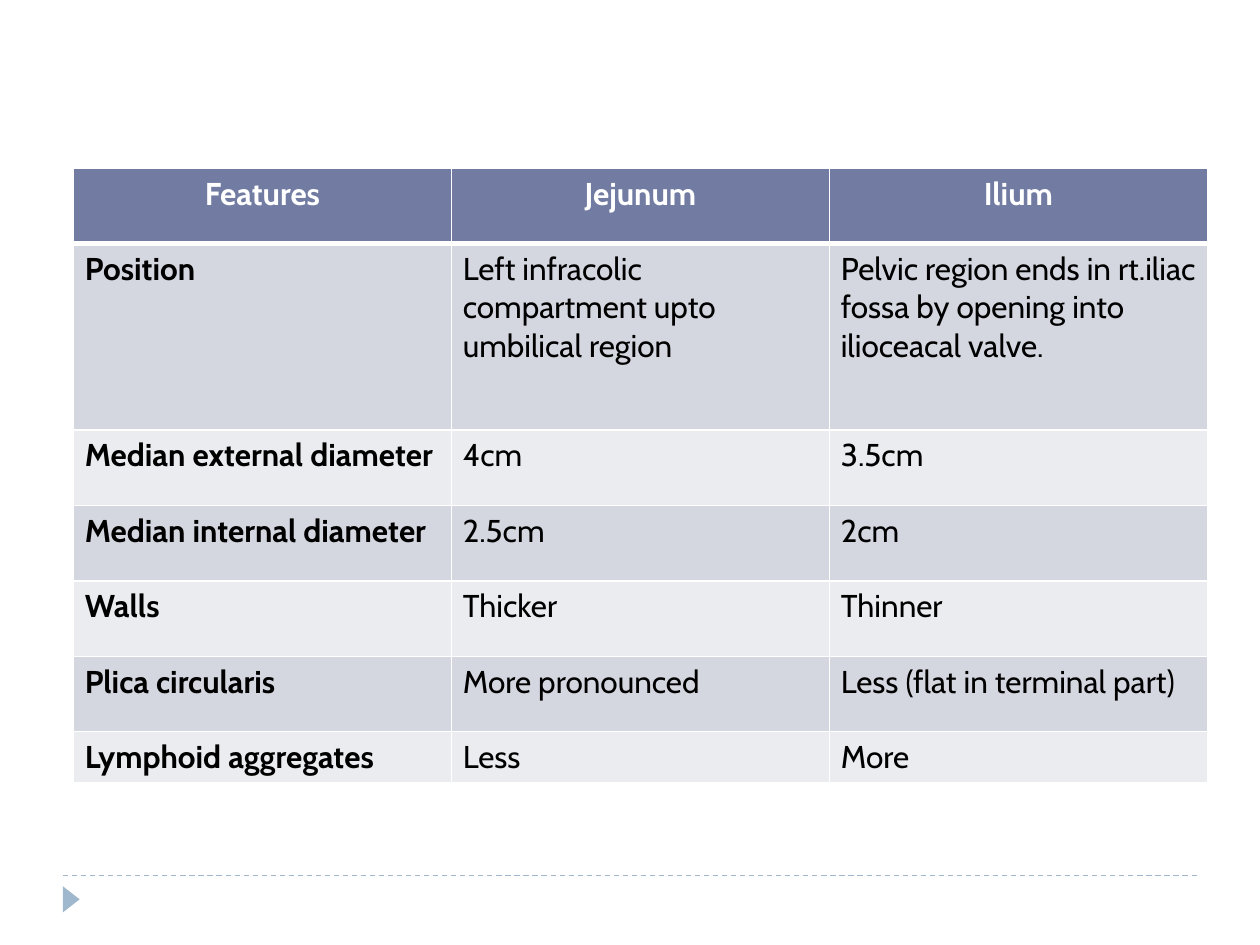
import pptx
import pptx.dml.color
import pptx.enum.dml
import pptx.enum.shapes
import pptx.enum.text
import pptx.oxml
import pptx.oxml.ns
import pptx.util
from pptx.util import Cm

RGBColor = pptx.dml.color.RGBColor
WHITE = RGBColor(0xFF, 0xFF, 0xFF)
BLACK = RGBColor(0x00, 0x00, 0x00)
HEADER = RGBColor(0x72, 0x7C, 0xA3)
BAND_DARK = RGBColor(0xD5, 0xD7, 0xE0)
BAND_LIGHT = RGBColor(0xEB, 0xEC, 0xF0)
ACCENT = RGBColor(0x9F, 0xB8, 0xCD)
FONT = "Cabin"

ROWS = [
    ("Features", "Jejunum", "Ilium"),
    ("Position", "Left infracolic compartment upto umbilical region",
     "Pelvic region ends in rt.iliac fossa by opening into ilioceacal valve."),
    ("Median external diameter", "4cm", "3.5cm"),
    ("Median internal diameter", "2.5cm", "2cm"),
    ("Walls", "Thicker", "Thinner"),
    ("Plica circularis", "More pronounced", "Less (flat in terminal part)"),
    ("Lymphoid aggregates", "Less", "More"),
]
ROW_HEIGHTS = [1.52, 3.76, 1.52, 1.52, 1.52, 1.52, 1.02]


def set_border(cell, side, width, color):
    """Add one solid cell border; call before the cell is filled."""
    cell._tc.get_or_add_tcPr().append(pptx.oxml.parse_xml(
        f'<a:ln{side} {pptx.oxml.ns.nsdecls("a")} w="{pptx.util.Pt(width)}">'
        f'<a:solidFill><a:srgbClr val="{color}"/></a:solidFill></a:ln{side}>'))


def style_cell(cell, text, row, col):
    is_header = row == 0
    for side in "LRTB":
        thick = (is_header and side == "B") or (row == 1 and side == "T")
        set_border(cell, side, 3 if thick else 1, WHITE)
    cell.fill.solid()
    cell.fill.fore_color.rgb = (
        HEADER if is_header else BAND_DARK if row % 2 else BAND_LIGHT)
    cell.margin_left = cell.margin_right = Cm(0.23)
    cell.margin_top = cell.margin_bottom = Cm(0.13)
    cell.text = text
    p = cell.text_frame.paragraphs[0]
    if is_header:
        p.alignment = pptx.enum.text.PP_ALIGN.CENTER
    p.font.name = FONT
    p.font.size = pptx.util.Pt(18)
    p.font.bold = is_header or col == 0
    p.font.color.rgb = WHITE if is_header else BLACK


def add_comparison_table(slide, left, top, width):
    """Jejunum and ilium, feature by feature."""
    columns = len(ROWS[0])
    table = slide.shapes.add_table(
        len(ROWS), columns, left, top, width, Cm(sum(ROW_HEIGHTS))).table
    for column in table.columns:
        column.width = width // columns
    for r, texts in enumerate(ROWS):
        table.rows[r].height = Cm(ROW_HEIGHTS[r])
        for c, text in enumerate(texts):
            style_cell(table.cell(r, c), text, r, c)


def add_footer(slide, left, top, width):
    """Dashed rule with a small arrow marker beneath its left end."""
    line = slide.shapes.add_connector(
        pptx.enum.shapes.MSO_CONNECTOR.STRAIGHT, left, top, left + width, top)
    line.line.color.rgb = ACCENT
    line.line.width = pptx.util.Pt(0.75)
    line.line.dash_style = pptx.enum.dml.MSO_LINE.DASH
    line._element.spPr.append(pptx.oxml.parse_xml(
        f'<a:effectLst {pptx.oxml.ns.nsdecls("a")}/>'))

    marker = slide.shapes.add_shape(
        pptx.enum.shapes.MSO_SHAPE.ISOSCELES_TRIANGLE,
        left - Cm(0.1), top + Cm(0.31), Cm(0.53), Cm(0.34))
    marker.rotation = 90
    marker.shadow.inherit = False
    marker.fill.solid()
    marker.fill.fore_color.rgb = ACCENT
    marker.line.fill.background()


def main():
    prs = pptx.Presentation()
    prs.slide_width, prs.slide_height = Cm(25.4), Cm(19.05)
    slide = prs.slides.add_slide(prs.slide_layouts[6])
    add_footer(slide, Cm(1.27), Cm(17.65), Cm(22.86))
    add_comparison_table(slide, Cm(1.48), Cm(3.39), Cm(22.86))
    prs.save("out.pptx")


if __name__ == "__main__":
    main()
